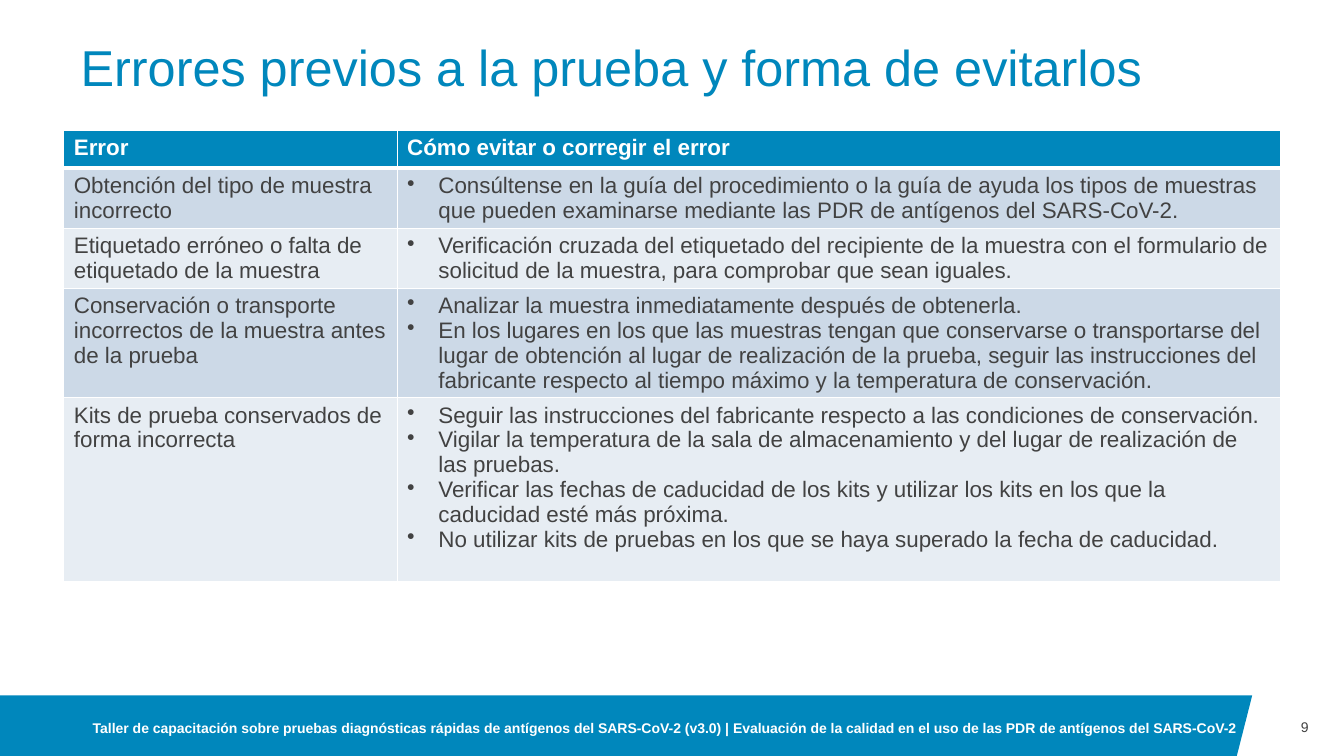
from dataclasses import dataclass

import pptx
import pptx.dml.color
import pptx.enum.text
import pptx.oxml
import pptx.oxml.ns
import pptx.util

RGBColor = pptx.dml.color.RGBColor
Anchor = pptx.enum.text.MSO_ANCHOR
Align = pptx.enum.text.PP_ALIGN

BLUE = RGBColor(0x00, 0x87, 0xBC)
WHITE = RGBColor(0xFF, 0xFF, 0xFF)
GRAY = RGBColor(0x42, 0x42, 0x42)
BANDS = (RGBColor(0xCC, 0xD9, 0xE7), RGBColor(0xE7, 0xED, 0xF3))
FONT = "Arial"
WIDTH = pptx.util.Inches(13.33)
HEIGHT = pptx.util.Inches(7.5)
INDENT = pptx.util.Inches(0.31)


@dataclass(frozen=True)
class Box:
    left: float
    top: float
    width: float
    height: float

    def emu(self) -> tuple[int, int, int, int]:
        return across(self.left), down(self.top), across(self.width), down(self.height)


@dataclass(frozen=True)
class Style:
    size: int
    color: RGBColor
    bold: bool = False
    align: Align = Align.LEFT
    spacing: float = 1.0


@dataclass(frozen=True)
class ErrorRow:
    error: str
    remedies: tuple[str, ...]
    height: float


TITLE_BOX = Box(6, -0.8, 86.27, 13.73)
TABLE_BOX = Box(4.75, 17.2, 90.55, 59.6)
BAR_BOX = Box(0, 92, 93.17, 8.4)
BAR_SLANT = 1.2
FOOTER_BOX = Box(6.9, 92.67, 85.75, 7.33)
NUMBER_BOX = Box(93.17, 92, 4.2, 8.4)
COLUMNS = (24.8, 65.75)
HEADER_HEIGHT = 5.07
HEADER = ("Error", "Cómo evitar o corregir el error")
HEADER_STYLE = Style(16, WHITE, bold=True)
BODY_STYLE = Style(16, GRAY)
ROWS = (
    ErrorRow("Obtención del tipo de muestra incorrecto", (
        "Consúltense en la guía del procedimiento o la guía de ayuda los tipos de muestras "
        "que pueden examinarse mediante las PDR de antígenos del SARS-CoV-2.",
    ), 7.93),
    ErrorRow("Etiquetado erróneo o falta de etiquetado de la muestra", (
        "Verificación cruzada del etiquetado del recipiente de la muestra con el formulario de "
        "solicitud de la muestra, para comprobar que sean iguales.",
    ), 7.93),
    ErrorRow("Conservación o transporte incorrectos de la muestra antes de la prueba", (
        "Analizar la muestra inmediatamente después de obtenerla.",
        "En los lugares en los que las muestras tengan que conservarse o transportarse del "
        "lugar de obtención al lugar de realización de la prueba, seguir las instrucciones del "
        "fabricante respecto al tiempo máximo y la temperatura de conservación.",
    ), 14.4),
    ErrorRow("Kits de prueba conservados de forma incorrecta", (
        "Seguir las instrucciones del fabricante respecto a las condiciones de conservación.",
        "Vigilar la temperatura de la sala de almacenamiento y del lugar de realización de "
        "las pruebas.",
        "Verificar las fechas de caducidad de los kits y utilizar los kits en los que la "
        "caducidad esté más próxima.",
        "No utilizar kits de pruebas en los que se haya superado la fecha de caducidad.",
    ), 24.27),
)


def across(percent: float) -> int:
    return round(WIDTH * percent / 100)


def down(percent: float) -> int:
    return round(HEIGHT * percent / 100)


def write(tf, lines: tuple[str, ...], style: Style, bulleted: bool = False) -> None:
    tf.word_wrap = True
    for i, line in enumerate(lines):
        p = tf.add_paragraph() if i else tf.paragraphs[0]
        p.text = line
        p.alignment = style.align
        p.line_spacing = style.spacing
        p.font.name = FONT
        p.font.size = pptx.util.Pt(style.size)
        p.font.bold = style.bold
        p.font.color.rgb = style.color
        if bulleted:
            add_bullet(p)


def add_bullet(p) -> None:
    pPr = p._p.get_or_add_pPr()
    pPr.set("marL", str(INDENT))
    pPr.set("indent", str(-INDENT))
    bullet = pptx.oxml.parse_xml(f'<a:buChar {pptx.oxml.ns.nsdecls("a")} char="•"/>')
    pPr.find(pptx.oxml.ns.qn("a:defRPr")).addprevious(bullet)


def frame(tf, anchor: Anchor) -> None:
    tf.margin_left = tf.margin_top = tf.margin_right = tf.margin_bottom = 0
    tf.vertical_anchor = anchor
    tf.auto_size = pptx.enum.text.MSO_AUTO_SIZE.NONE


def paint_cell(cell, fill: RGBColor, bottom: int = 1, top: int = 1) -> None:
    tcPr = cell._tc.get_or_add_tcPr()
    for side, points in (("L", 1), ("R", 1), ("T", top), ("B", bottom)):
        tcPr.append(pptx.oxml.parse_xml(
            f'<a:ln{side} {pptx.oxml.ns.nsdecls("a")} w="{pptx.util.Pt(points)}">'
            f'<a:solidFill><a:srgbClr val="{WHITE}"/></a:solidFill></a:ln{side}>'))
    cell.fill.solid()
    cell.fill.fore_color.rgb = fill


def add_title(s, text: str) -> None:
    title = s.shapes.title
    title.left, title.top, title.width, title.height = TITLE_BOX.emu()
    frame(title.text_frame, Anchor.BOTTOM)
    write(title.text_frame, (text,), Style(36, BLUE, spacing=0.9))


def add_text(s, box: Box, text: str, style: Style) -> None:
    tf = s.shapes.add_textbox(*box.emu()).text_frame
    frame(tf, Anchor.MIDDLE)
    write(tf, (text,), style)


def add_footer_bar(s) -> None:
    left, top, width, height = BAR_BOX.emu()
    builder = s.shapes.build_freeform(left, top)
    builder.add_line_segments((
        (left + width, top),
        (left + width - across(BAR_SLANT), top + height),
        (left, top + height),
    ))
    bar = builder.convert_to_shape()
    bar.shadow.inherit = False
    bar.fill.solid()
    bar.fill.fore_color.rgb = BLUE
    bar.line.fill.background()


def add_error_table(s) -> None:
    table = s.shapes.add_table(len(ROWS) + 1, len(COLUMNS), *TABLE_BOX.emu()).table
    table.horz_banding = False
    for column, width in zip(table.columns, COLUMNS):
        column.width = across(width)
    table.rows[0].height = down(HEADER_HEIGHT)
    for c, heading in enumerate(HEADER):
        write(table.cell(0, c).text_frame, (heading,), HEADER_STYLE)
        paint_cell(table.cell(0, c), BLUE, bottom=3)
    for r, row in enumerate(ROWS, start=1):
        table.rows[r].height = down(row.height)
        write(table.cell(r, 0).text_frame, (row.error,), BODY_STYLE)
        write(table.cell(r, 1).text_frame, row.remedies, BODY_STYLE, bulleted=True)
        for c in range(len(COLUMNS)):
            paint_cell(table.cell(r, c), BANDS[(r - 1) % 2], top=3 if r == 1 else 1)


def main() -> None:
    prs = pptx.Presentation()
    prs.slide_width, prs.slide_height = WIDTH, HEIGHT
    s = prs.slides.add_slide(prs.slide_layouts[5])
    add_footer_bar(s)
    add_title(s, "Errores previos a la prueba y forma de evitarlos")
    add_text(s, NUMBER_BOX, "9", Style(10, GRAY, align=Align.RIGHT))
    add_error_table(s)
    add_text(
        s, FOOTER_BOX,
        "Taller de capacitación sobre pruebas diagnósticas rápidas de antígenos del SARS-CoV-2 (v3.0) | "
        "Evaluación de la calidad en el uso de las PDR de antígenos del SARS-CoV-2",
        Style(10, WHITE, bold=True))
    prs.save("out.pptx")


if __name__ == "__main__":
    main()
